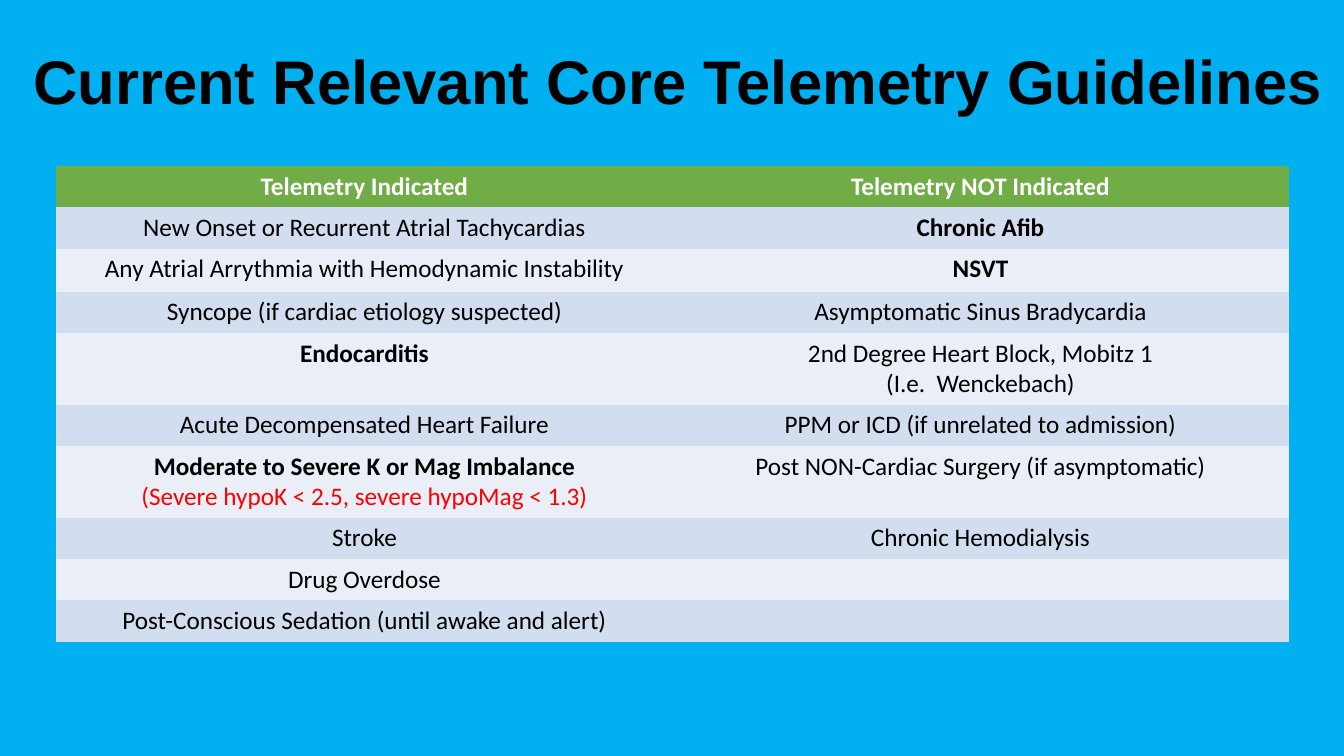
from pptx import Presentation
from pptx.dml.color import RGBColor
from pptx.enum.text import MSO_ANCHOR, PP_ALIGN
from pptx.util import Inches, Pt

CENTER = PP_ALIGN.CENTER
BOTTOM = MSO_ANCHOR.BOTTOM
TITLE_ONLY = 5
NO_GRID_STYLE = "{2D5ABB26-0587-4C30-8999-92F81FD0307C}"

COLORS = {
    "background": "00B0F0",
    "header": "70AD47",
    "odd_row": "D2DEEF",
    "even_row": "EAEFF7",
    "text": "000000",
    "header_text": "FFFFFF",
    "limits": "FF0000",
}

ROWS = [
    ("Telemetry Indicated", "Telemetry NOT Indicated"),
    ("New Onset or Recurrent Atrial Tachycardias", "Chronic Afib"),
    ("Any Atrial Arrythmia with Hemodynamic Instability", "NSVT"),
    ("Syncope (if cardiac etiology suspected)", "Asymptomatic Sinus Bradycardia"),
    ("Endocarditis", "2nd Degree Heart Block, Mobitz 1\n(I.e.  Wenckebach)"),
    ("Acute Decompensated Heart Failure", "PPM or ICD (if unrelated to admission)"),
    ("Moderate to Severe K or Mag Imbalance\n(Severe hypoK < 2.5, severe hypoMag < 1.3)",
     "Post NON-Cardiac Surgery (if asymptomatic)"),
    ("Stroke", "Chronic Hemodialysis"),
    ("Drug Overdose", ""),
    ("Post-Conscious Sedation (until awake and alert)", ""),
]
ROW_HEIGHTS = [0.4, 0.41, 0.43, 0.41, 0.7, 0.41, 0.7, 0.41, 0.41, 0.41]
BOLD_LINES = {*ROWS[0], "Chronic Afib", "NSVT", "Endocarditis",
              "Moderate to Severe K or Mag Imbalance"}


def rgb(name):
    return RGBColor.from_string(COLORS[name])


def format_paragraph(p, font, size, color, bold):
    p.alignment = CENTER
    for r in p.runs:
        r.font.name = font
        r.font.size = Pt(size)
        r.font.color.rgb = rgb(color)
        r.font.bold = bold


def add_title(slide, text):
    title = slide.shapes.title
    title.left, title.top = Inches(0.13), Inches(0.07)
    title.width, title.height = Inches(13.2), Inches(1.14)
    tf = title.text_frame
    tf.text = text
    tf.word_wrap = True
    tf.vertical_anchor = BOTTOM
    tf.margin_left = tf.margin_right = 0
    p = tf.paragraphs[0]
    p.line_spacing = 1.0
    format_paragraph(p, "Arial", 44, "text", True)


def fill_cell(cell, text, fill, color):
    cell.fill.solid()
    cell.fill.fore_color.rgb = rgb(fill)
    cell.text_frame.text = text
    for p in cell.text_frame.paragraphs:
        line_color = "limits" if p.text.startswith("(Severe") else color
        format_paragraph(p, "Calibri", 18, line_color, p.text in BOLD_LINES)


def add_guidelines_table(slide):
    frame = slide.shapes.add_table(len(ROWS), 2, Inches(0.56), Inches(1.65),
                                   Inches(12.22), Inches(sum(ROW_HEIGHTS)))
    table = frame.table
    table._tbl.tblPr[0].text = NO_GRID_STYLE
    for i, (texts, height) in enumerate(zip(ROWS, ROW_HEIGHTS)):
        table.rows[i].height = Inches(height)
        if i == 0:
            fill, color = "header", "header_text"
        else:
            fill, color = ("odd_row" if i % 2 else "even_row"), "text"
        for cell, text in zip(table.rows[i].cells, texts):
            fill_cell(cell, text, fill, color)


def main():
    prs = Presentation()
    prs.slide_width, prs.slide_height = Inches(13.33), Inches(7.5)
    slide = prs.slides.add_slide(prs.slide_layouts[TITLE_ONLY])
    slide.background.fill.solid()
    slide.background.fill.fore_color.rgb = rgb("background")
    add_title(slide, "Current Relevant Core Telemetry Guidelines")
    add_guidelines_table(slide)
    prs.save("out.pptx")


if __name__ == "__main__":
    main()
